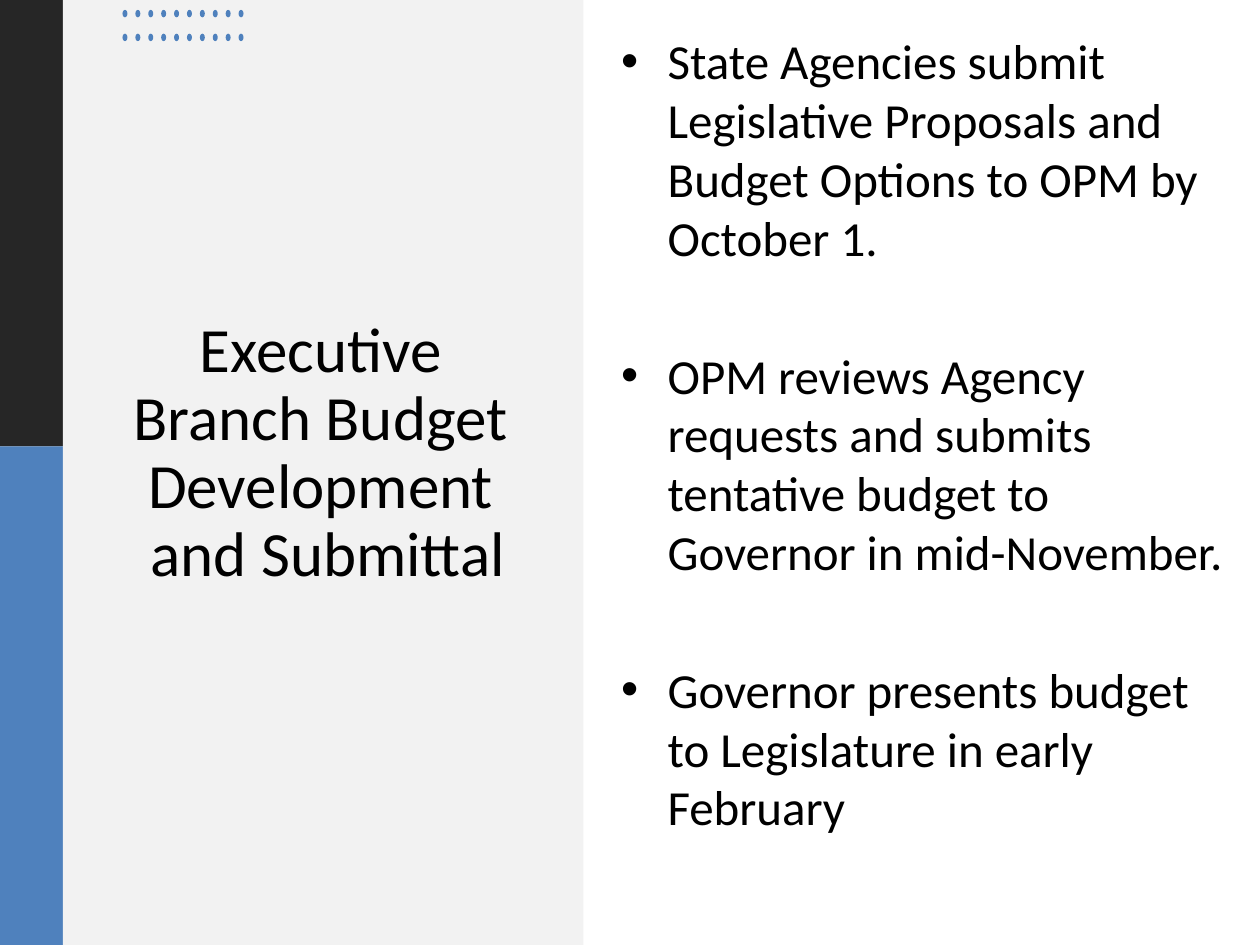
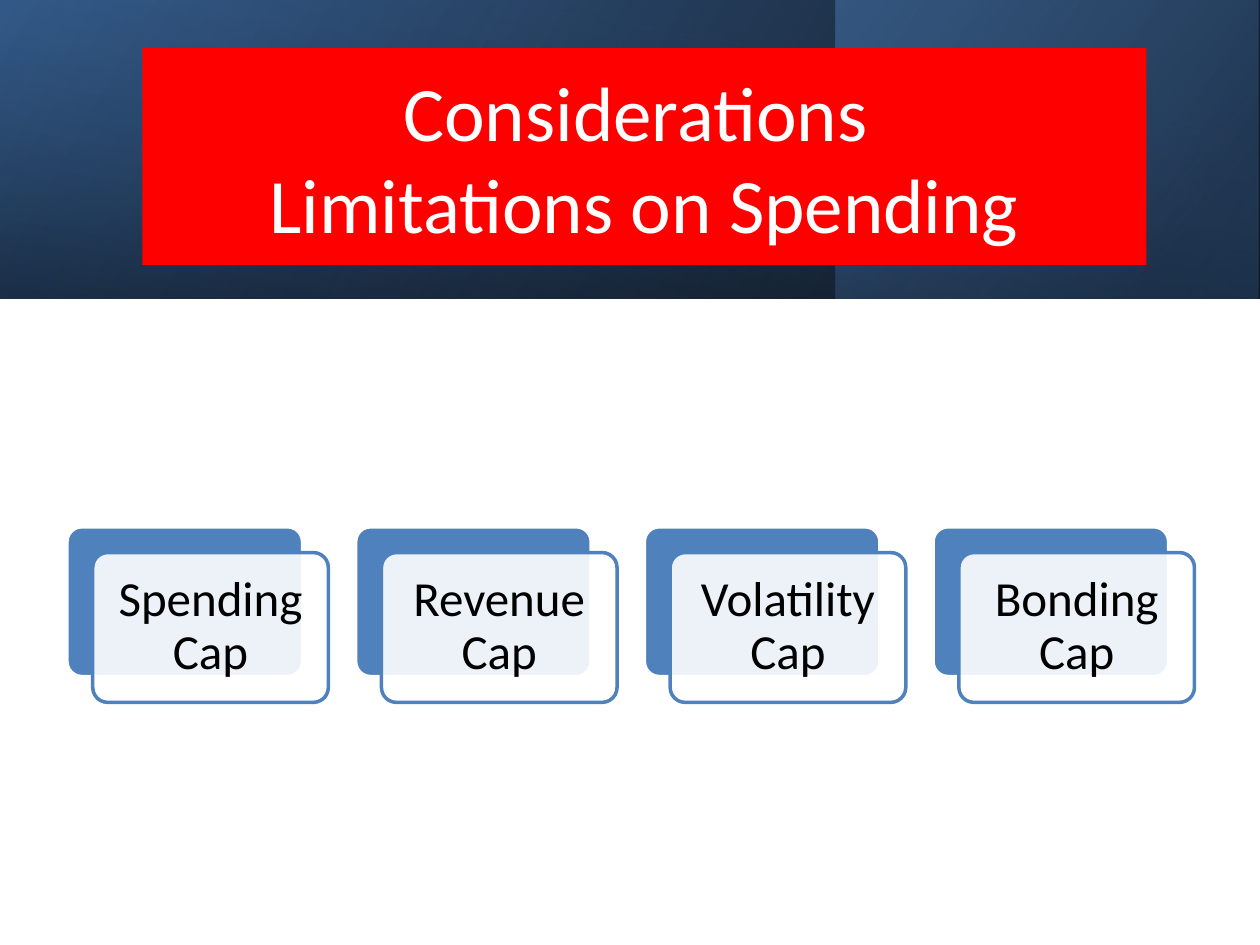
"""Build two slides on the state budget: its submittal and its spending limits."""
from dataclasses import dataclass
from typing import Optional

from pptx import Presentation
from pptx.dml.color import RGBColor
from pptx.enum.shapes import MSO_SHAPE
from pptx.enum.text import MSO_ANCHOR, PP_ALIGN
from pptx.oxml import parse_xml
from pptx.oxml.ns import nsdecls, qn
from pptx.oxml.xmlchemy import OxmlElement
from pptx.shapes.autoshape import Shape
from pptx.slide import Slide
from pptx.util import Cm, Pt

RECTANGLE = MSO_SHAPE.RECTANGLE
ROUNDED = MSO_SHAPE.ROUNDED_RECTANGLE
OVAL = MSO_SHAPE.OVAL
MIDDLE = MSO_ANCHOR.MIDDLE
TOP = MSO_ANCHOR.TOP
CENTER = PP_ALIGN.CENTER

FONT = "Calibri"
COLORS = {
    "black": "000000",
    "white": "FFFFFF",
    "charcoal": "262626",
    "blue": "4F81BD",
    "mist": "F2F2F2",
    "deep": "376092",
    "navy": "254061",
    "red": "FF0000",
}
PAGE_WIDTH, PAGE_HEIGHT = 25.4, 19.05
SIDEBAR_WIDTH, SIDEBAR_SPLIT = 1.27, 9.0
BANNER_HEIGHT = 6.02

DOT_ROWS, DOT_COLUMNS = 2, 10
DOT_LEFT, DOT_TOP = 2.47, 0.2
DOT_PITCH_X, DOT_PITCH_Y = 0.26, 0.48

CARD_LEFT, CARD_TOP, CARD_PITCH = 1.35, 10.62, 5.82
CARD_WIDTH, CARD_HEIGHT, CARD_OFFSET = 4.75, 3.02, 0.52

STEPS = (
    "State Agencies submit Legislative Proposals and Budget Options to OPM by October 1.",
    "OPM reviews Agency requests and submits tentative budget to Governor in mid-November.",
    "Governor presents budget to Legislature in early February",
)
CAPS = ("Spending Cap", "Revenue Cap", "Volatility Cap", "Bonding Cap")


@dataclass(frozen=True)
class Area:
    """Position and size in centimetres."""
    left: float
    top: float
    width: float
    height: float

    def lengths(self) -> tuple:
        """Return the four values as lengths."""
        return Cm(self.left), Cm(self.top), Cm(self.width), Cm(self.height)


@dataclass(frozen=True)
class Panel:
    """A filled shape, with an optional outline."""
    area: Area
    fill: str
    kind: MSO_SHAPE = RECTANGLE
    line: Optional[str] = None
    opacity: int = 100


@dataclass(frozen=True)
class Stop:
    """One gradient stop, in percent."""
    position: int
    color: str
    opacity: int


@dataclass(frozen=True)
class Wash:
    """A mirrored rectangle with a translucent gradient."""
    area: Area
    angle: int
    stops: tuple[Stop, Stop]
    rotation: int = 0


SIDE_PANELS = (
    Panel(Area(0, 0, SIDEBAR_WIDTH, SIDEBAR_SPLIT), "charcoal"),
    Panel(Area(0, SIDEBAR_SPLIT, SIDEBAR_WIDTH, PAGE_HEIGHT - SIDEBAR_SPLIT), "blue"),
    Panel(Area(SIDEBAR_WIDTH, 0, 10.49, PAGE_HEIGHT), "mist"),
)
BANNER_TURN = (PAGE_WIDTH - BANNER_HEIGHT) / 2
BANNER_WASHES = (
    Wash(Area(0, 0, PAGE_WIDTH, BANNER_HEIGHT), 330,
         (Stop(0, "black", 96), Stop(100, "deep", 100))),
    Wash(Area(16.84, 0, 8.53, BANNER_HEIGHT), 320,
         (Stop(19, "navy", 68), Stop(100, "blue", 48))),
    Wash(Area(BANNER_TURN, -BANNER_TURN, BANNER_HEIGHT, PAGE_WIDTH), 350,
         (Stop(23, "deep", 16), Stop(99, "black", 45)), 270),
)


def rgb(name: str) -> RGBColor:
    """Look up a palette colour."""
    return RGBColor.from_string(COLORS[name])


def draw_panel(page: Slide, panel: Panel) -> Shape:
    """Draw a filled shape."""
    shape = page.shapes.add_shape(panel.kind, *panel.area.lengths())
    shape.shadow.inherit = False
    shape.fill.solid()
    shape.fill.fore_color.rgb = rgb(panel.fill)
    if panel.opacity < 100:
        alpha = OxmlElement("a:alpha")
        alpha.set("val", str(panel.opacity * 1000))
        shape.element.spPr.find(qn("a:solidFill"))[0].append(alpha)
    if panel.kind == ROUNDED:
        shape.adjustments[0] = 0.1
    if panel.line:
        shape.line.color.rgb = rgb(panel.line)
        shape.line.width = Pt(2)
    else:
        shape.line.fill.background()
    return shape


def draw_wash(page: Slide, wash: Wash) -> None:
    """Draw a mirrored gradient rectangle."""
    shape = draw_panel(page, Panel(wash.area, wash.stops[0].color))
    shape.rotation = wash.rotation
    properties = shape.element.spPr
    properties.find(qn("a:xfrm")).set("flipH", "1")
    stops = "".join(
        f'<a:gs pos="{stop.position * 1000}"><a:srgbClr val="{COLORS[stop.color]}">'
        f'<a:alpha val="{stop.opacity * 1000}"/></a:srgbClr></a:gs>'
        for stop in wash.stops
    )
    gradient = parse_xml(
        f'<a:gradFill {nsdecls("a")} rotWithShape="1"><a:gsLst>{stops}</a:gsLst>'
        f'<a:lin ang="{wash.angle * 60000}" scaled="0"/></a:gradFill>'
    )
    properties.replace(properties.find(qn("a:solidFill")), gradient)


def write_centered(shape: Shape, text: str, size: int, color: str = "black",
                   spacing: float = 1.0) -> None:
    """Write one centred paragraph in the middle of a shape."""
    frame = shape.text_frame
    frame.word_wrap = True
    frame.vertical_anchor = MIDDLE
    para = frame.paragraphs[0]
    para.text = text
    para.alignment = CENTER
    para.line_spacing = spacing
    style_font(para, size, color)


def style_font(para, size: int, color: str) -> None:
    """Set the font of a whole paragraph."""
    para.font.name = FONT
    para.font.size = Pt(size)
    para.font.color.rgb = rgb(color)


def write_bullets(page: Slide, area: Area, items: tuple[str, ...]) -> None:
    """Write a widely spaced bullet list."""
    frame = page.shapes.add_textbox(*area.lengths()).text_frame
    frame.word_wrap = True
    frame.vertical_anchor = TOP
    for index, item in enumerate(items):
        para = frame.add_paragraph() if index else frame.paragraphs[0]
        para.text = item
        if index:
            para.space_before = Pt(45)
        properties = para._p.get_or_add_pPr()
        properties.set("marL", str(Cm(0.94)))
        properties.set("indent", str(-Cm(0.94)))
        bullet_font = OxmlElement("a:buFont")
        bullet_font.set("typeface", "Arial")
        bullet = OxmlElement("a:buChar")
        bullet.set("char", "•")
        properties.extend((bullet_font, bullet))
        style_font(para, 28, "black")


def draw_dots(page: Slide) -> None:
    """Draw the grid of small dots."""
    for row in range(DOT_ROWS):
        for column in range(DOT_COLUMNS):
            area = Area(DOT_LEFT + column * DOT_PITCH_X, DOT_TOP + row * DOT_PITCH_Y, 0.1, 0.15)
            draw_panel(page, Panel(area, "blue", OVAL))


def draw_card(page: Slide, left: float, label: str) -> None:
    """Draw a labelled card over its offset backing."""
    back = Area(left, CARD_TOP, CARD_WIDTH, CARD_HEIGHT)
    front = Area(left + CARD_OFFSET, CARD_TOP + CARD_OFFSET, CARD_WIDTH, CARD_HEIGHT)
    draw_panel(page, Panel(back, "blue", ROUNDED, "white"))
    card = draw_panel(page, Panel(front, "white", ROUNDED, "blue", 90))
    write_centered(card, label, 28, spacing=0.9)


def build_submittal(page: Slide) -> None:
    """Build the slide on budget development."""
    for panel in SIDE_PANELS:
        draw_panel(page, panel)
    title = page.shapes.add_textbox(*Area(2.44, 3.71, 8.05, 10.9).lengths())
    write_centered(title, "Executive Branch Budget Development\v and Submittal", 36, spacing=0.9)
    draw_dots(page)
    write_bullets(page, Area(12.27, 0.5, 12.7, 17.35), STEPS)


def build_limitations(page: Slide) -> None:
    """Build the slide on spending limits."""
    for wash in BANNER_WASHES:
        draw_wash(page, wash)
    title = draw_panel(page, Panel(Area(2.87, 0.97, 20.24, 4.37), "red"))
    write_centered(title, "Considerations \vLimitations on Spending", 44, "white")
    for index, label in enumerate(CAPS):
        draw_card(page, CARD_LEFT + index * CARD_PITCH, label)


def main() -> None:
    """Create and save the deck."""
    deck = Presentation()
    deck.slide_width, deck.slide_height = Cm(PAGE_WIDTH), Cm(PAGE_HEIGHT)
    blank = deck.slide_layouts[6]
    for build in (build_submittal, build_limitations):
        build(deck.slides.add_slide(blank))
    deck.save("out.pptx")


if __name__ == "__main__":
    main()
